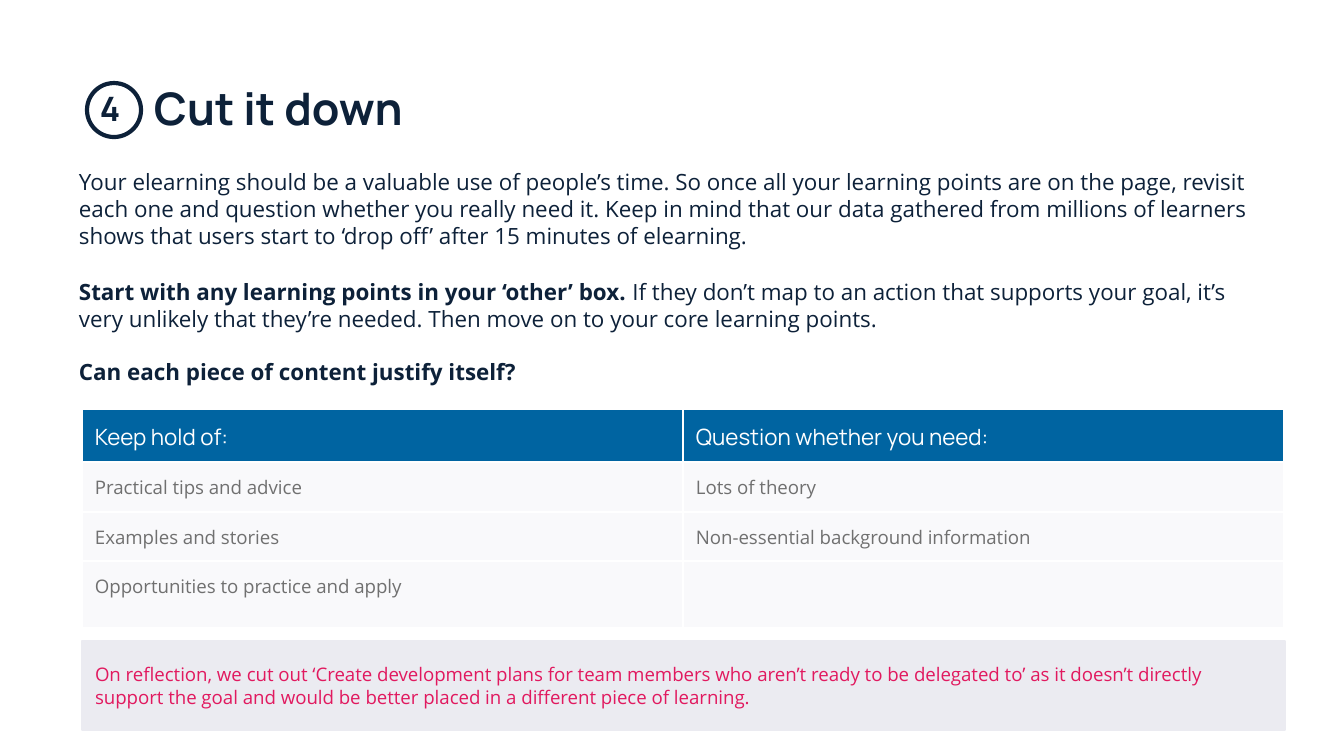
from dataclasses import dataclass

from lxml import etree
from pptx import Presentation
from pptx.dml.color import RGBColor
from pptx.enum.shapes import MSO_SHAPE
from pptx.enum.text import MSO_ANCHOR, PP_ALIGN
from pptx.oxml.ns import qn
from pptx.util import Pt

OVAL, RECT = MSO_SHAPE.OVAL, MSO_SHAPE.RECTANGLE
TOP, MIDDLE = MSO_ANCHOR.TOP, MSO_ANCHOR.MIDDLE
LEFT, CENTER = PP_ALIGN.LEFT, PP_ALIGN.CENTER
PX = 9144000 / 1344  # EMU in one px
INSET = 13


@dataclass(frozen=True)
class Theme:
    navy: str = "0D2139"
    blue: str = "0064A1"
    grey: str = "707070"
    pink: str = "E1195F"
    white: str = "FFFFFF"
    row: str = "F9F9FB"
    note: str = "EBEBF1"
    heading: str = "Manrope"
    body: str = "Open Sans"
    title_size: int = 24
    badge_size: int = 18
    text_size: int = 12
    small_size: int = 10


T = Theme()


def px(n):
    return round(n * PX)


def rgb(color):
    return RGBColor.from_string(color)


def add_run(p, text, font, size, color, bold=False):
    r = p.add_run()
    r.text = text
    r.font.name, r.font.size, r.font.bold = font, Pt(size), bold
    r.font.color.rgb = rgb(color)


def set_insets(tf):
    tf.margin_left = tf.margin_right = tf.margin_top = tf.margin_bottom = px(INSET)


def frame_of(sp, anchor=TOP):
    tf = sp.text_frame
    tf.word_wrap = True
    tf.vertical_anchor = anchor
    set_insets(tf)
    return tf


def add_text_box(s, x, y, w, h):
    return frame_of(s.shapes.add_textbox(px(x), px(y), px(w), px(h)))


def add_box(s, kind, x, y, w, h, line, weight, fill=None):
    sp = s.shapes.add_shape(kind, px(x), px(y), px(w), px(h))
    sp.shadow.inherit = False
    if fill:
        sp.fill.solid()
        sp.fill.fore_color.rgb = rgb(fill)
    else:
        sp.fill.background()
    sp.line.color.rgb = rgb(line)
    sp.line.width = Pt(weight)
    return sp


def add_heading(s, x, y, number, title):
    # Numbered ring
    add_box(s, OVAL, x, y + 15, 54, 54, T.navy, 2.25)
    p = add_text_box(s, x, y + 7, 42, 54).paragraphs[0]
    p.alignment = CENTER
    add_run(p, number, T.heading, T.badge_size, T.navy, True)
    # Title
    p = add_text_box(s, x + 54, y, 821, 82).paragraphs[0]
    add_run(p, title, T.heading, T.title_size, T.navy, True)


def add_body(s, x, y, w, h, paragraphs):
    tf = add_text_box(s, x, y, w, h)
    for i, (gap, runs) in enumerate(paragraphs):
        p = tf.paragraphs[0] if i == 0 else tf.add_paragraph()
        p.space_before = Pt(gap)
        for text, bold in runs:
            add_run(p, text, T.body, T.text_size, T.navy, bold)


def set_borders(cell, color, weight):
    tc_pr = cell._tc.get_or_add_tcPr()
    for i, side in enumerate(("lnL", "lnR", "lnT", "lnB")):
        ln = etree.Element(qn(f"a:{side}"), w=str(Pt(weight)))
        fill = etree.SubElement(ln, qn("a:solidFill"))
        etree.SubElement(fill, qn("a:srgbClr"), val=color)
        tc_pr.insert(i, ln)


def add_comparison(s, x, y, w, row_heights, rows):
    cols = len(rows[0])
    table = s.shapes.add_table(len(rows), cols, px(x), px(y), px(w),
                               px(sum(row_heights))).table
    for col in table.columns:
        col.width = px(w / cols)
    for i, (height, texts) in enumerate(zip(row_heights, rows)):
        table.rows[i].height = px(height)
        header = i == 0
        style = ((T.heading, T.text_size, T.white) if header
                 else (T.body, T.small_size, T.grey))
        for j, text in enumerate(texts):
            cell = table.cell(i, j)
            set_insets(cell)
            cell.fill.solid()
            cell.fill.fore_color.rgb = rgb(T.blue if header else T.row)
            set_borders(cell, T.white, 0.75)
            if text:
                add_run(cell.text_frame.paragraphs[0], text, *style)


def add_note(s, x, y, w, h, text):
    sp = add_box(s, RECT, x, y, w, h, T.note, 0.75, T.note)
    p = frame_of(sp, MIDDLE).paragraphs[0]
    p.alignment = LEFT
    add_run(p, text, T.body, T.small_size, T.pink)


def main():
    prs = Presentation()
    prs.slide_width, prs.slide_height = px(1344), px(756)
    s = prs.slides.add_slide(prs.slide_layouts[6])

    add_heading(s, 87, 68, "4", "Cut it down")
    add_body(s, 66, 155, 1219, 224, [
        (0, [("Your elearning should be a valuable use of people’s time. So once all "
              "your learning points are on the page, revisit each one and question "
              "whether you really need it. Keep in mind that our data gathered from "
              "millions of learners shows that users start to ‘drop off’ after 15 "
              "minutes of elearning.", False)]),
        (16, [("Start with any learning points in your ‘other’ box.", True),
              (" If they don’t map to an action that supports your goal, it’s very "
               "unlikely that they’re needed. Then move on to your core learning "
               "points.", False)]),
        (14, [("Can each piece of content justify itself?", True)]),
    ])
    add_comparison(s, 82, 409, 1202, [53, 50, 49, 67], [
        ("Keep hold of:", "Question whether you need:"),
        ("Practical tips and advice", "Lots of theory"),
        ("Examples and stories", "Non-essential background information"),
        ("Opportunities to practice and apply", ""),
    ])
    add_note(s, 82, 641, 1203, 89,
             "On reflection, we cut out ‘Create development plans for team members "
             "who aren’t ready to be delegated to’ as it doesn’t directly support the "
             "goal and would be better placed in a different piece of learning.")

    prs.save("out.pptx")


if __name__ == "__main__":
    main()
